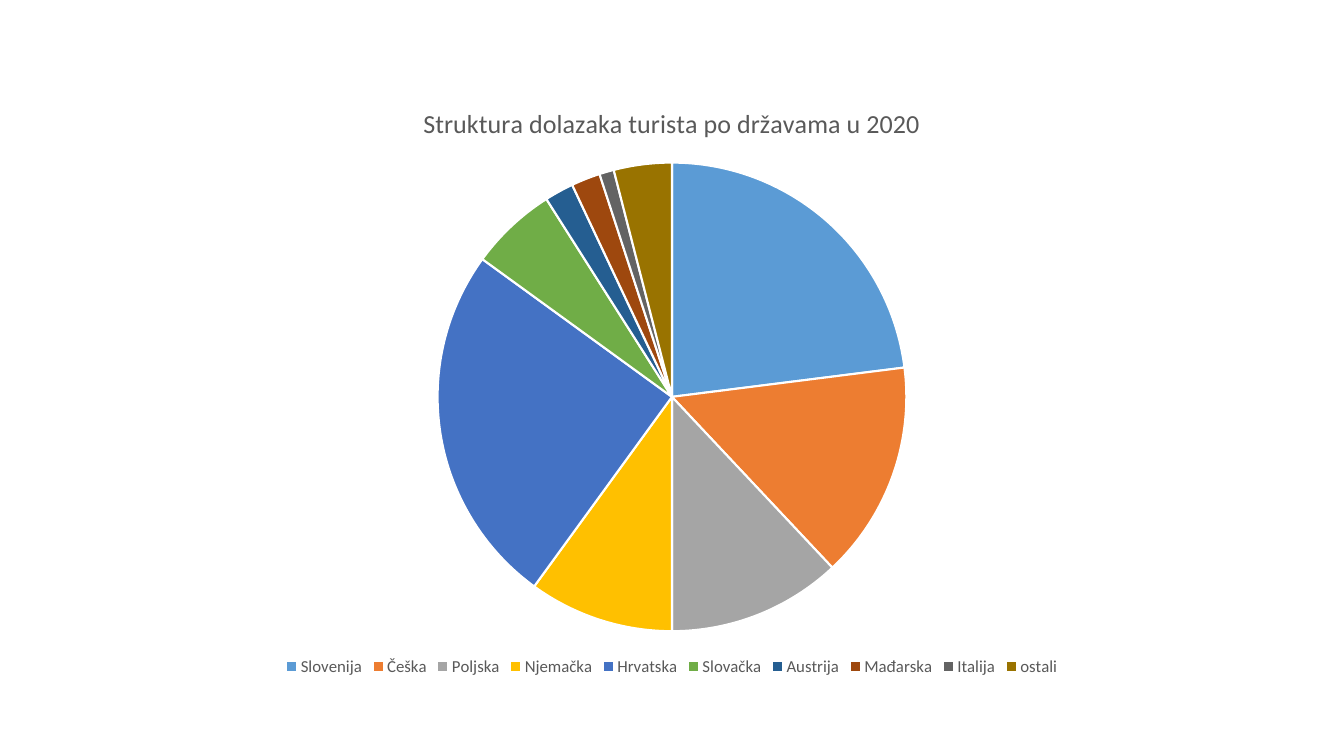
from pptx import Presentation
from pptx.chart.data import CategoryChartData
from pptx.dml.color import RGBColor
from pptx.enum.chart import XL_CHART_TYPE as ChartType, XL_LEGEND_POSITION as LegendPosition
from pptx.util import Inches, Pt

THEME = {
    "font": "Calibri",
    "text": RGBColor.from_string("595959"),
    "divider": RGBColor.from_string("FFFFFF"),
    "title_size": Pt(18.6),
    "legend_size": Pt(12),
    "divider_width": Pt(1.5),
}

# Country, share of arrivals in percent, slice colour
ARRIVALS = [
    ("Slovenija", 23, "5B9BD5"),
    ("Češka", 15, "ED7D31"),
    ("Poljska", 12, "A5A5A5"),
    ("Njemačka", 10, "FFC000"),
    ("Hrvatska", 25, "4472C4"),
    ("Slovačka", 6, "70AD47"),
    ("Austrija", 2, "255E91"),
    ("Mađarska", 2, "9E480E"),
    ("Italija", 1, "636363"),
    ("ostali", 4, "997300"),
]
countries, shares, colours = zip(*ARRIVALS)


def style_font(font, size):
    font.name = THEME["font"]
    font.size = size
    font.bold = False
    font.color.rgb = THEME["text"]


# Slide
deck = Presentation()
deck.slide_width = Inches(13.33)
deck.slide_height = Inches(7.5)
slide = deck.slides.add_slide(deck.slide_layouts[6])

# Pie of arrivals, centred across the slide
arrivals_data = CategoryChartData()
arrivals_data.categories = countries
arrivals_data.add_series("Series 1", shares)
pie_width = Inches(11.5)
pie = slide.shapes.add_chart(
    ChartType.PIE,
    (deck.slide_width - pie_width) // 2, int(deck.slide_height * 0.11),
    pie_width, int(deck.slide_height * 0.79),
    arrivals_data,
).chart
pie.font.name = THEME["font"]
pie.font.size = Pt(10)

# Title
pie.has_title = True
heading = pie.chart_title.text_frame
heading.text = "Struktura dolazaka turista po državama u 2020"
style_font(heading.paragraphs[0].runs[0].font, THEME["title_size"])
pie.chart_title.include_in_layout = False

# Legend
pie.has_legend = True
pie.legend.position = LegendPosition.BOTTOM
pie.legend.include_in_layout = False
style_font(pie.legend.font, THEME["legend_size"])

# Slices
pie.plots[0].vary_by_categories = True
for index, colour in enumerate(colours):
    slice_format = pie.plots[0].series[0].points[index].format
    slice_format.fill.solid()
    slice_format.fill.fore_color.rgb = RGBColor.from_string(colour)
    slice_format.line.color.rgb = THEME["divider"]
    slice_format.line.width = THEME["divider_width"]

deck.save("out.pptx")
